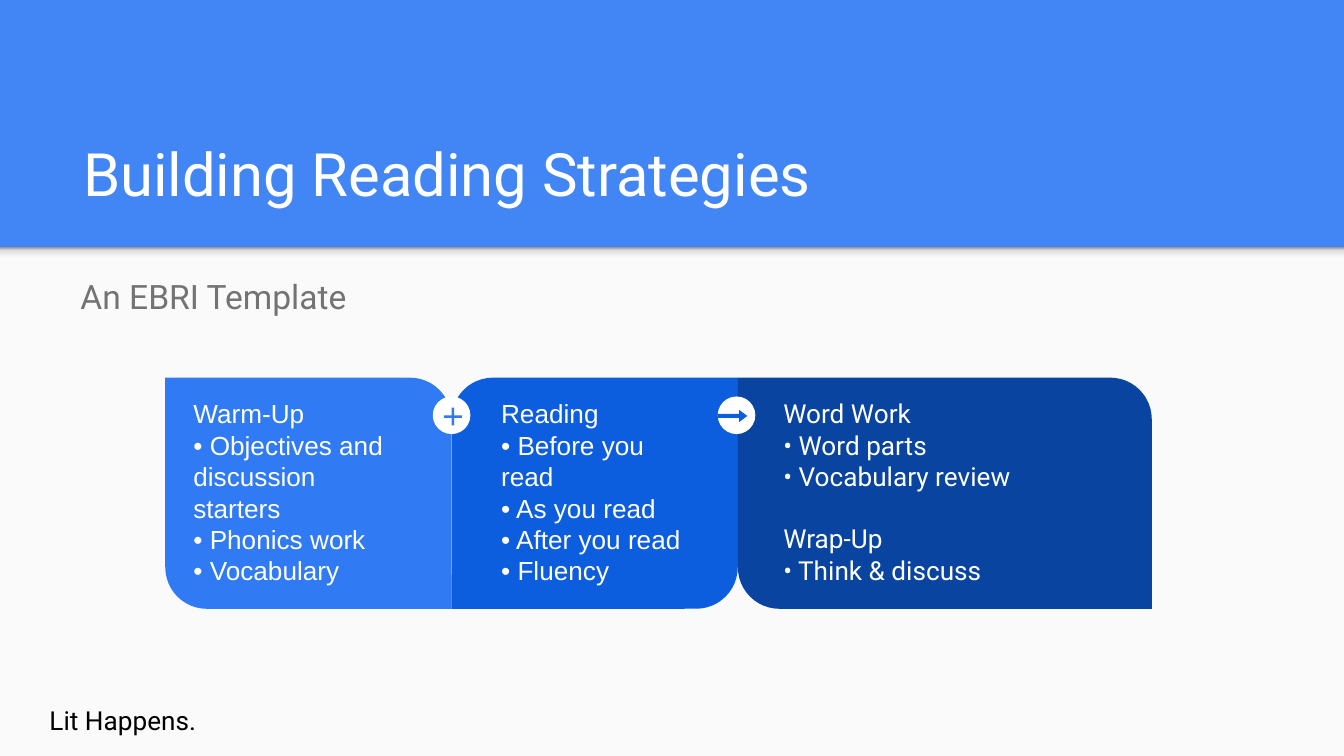
from dataclasses import dataclass

from lxml import etree
from pptx import Presentation
from pptx.dml.color import RGBColor
from pptx.enum import shapes, text
from pptx.oxml import ns
from pptx.util import Inches, Pt

COLORS = {
    "header": "4285F4",
    "page": "FAFAFA",
    "white": "FFFFFF",
    "gray": "737373",
    "black": "000000",
    "light": "307BF3",
    "medium": "0D5DDF",
    "dark": "0944A1",
}
SHADOW_STOPS = [(0, "F9F9F9"), (36, "F9F9F9"), (80, "DEDEDE"), (100, "999999")]
SLIDE_WIDTH = 10
SLIDE_HEIGHT = SLIDE_WIDTH * 9 / 16
HEADER_HEIGHT = 1.84
PANEL_TOP, PANEL_HEIGHT = 2.81, 1.72
CORNER = 0.18
BADGE_SIZE, BADGE_CENTER_Y = 0.28, 3.09
KIND = shapes.MSO_SHAPE


@dataclass
class Box:
    left: float
    top: float
    width: float
    height: float

    def lengths(self):
        return [Inches(n) for n in (self.left, self.top, self.width, self.height)]


@dataclass
class Panel:
    left: float
    width: float
    color: str
    corners: tuple
    text_left: float
    text_width: float
    font: str
    groups: list


@dataclass
class Badge:
    center_x: float
    symbol: int
    symbol_box: Box
    adjustments: list
    color: str


PANELS = [
    Panel(1.23, 2.13, "light", (0, CORNER), 1.34, 1.69, "Arial",
          [["Warm-Up", "• Objectives and", "discussion starters",
            "• Phonics work", "• Vocabulary"]]),
    Panel(3.36, 2.13, "medium", (CORNER, 0), 3.63, 1.59, "Arial",
          [["Reading", "• Before you read", "• As you read",
            "• After you read", "• Fluency"]]),
    Panel(5.49, 3.08, "dark", (0, CORNER), 5.73, 2.61, "Roboto",
          [["Word Work", "• Word parts", "• Vocabulary review"],
           ["Wrap-Up", "• Think & discuss"]]),
]
BADGES = [
    Badge(5.48, KIND.RIGHT_ARROW, Box(5.34, 3.05, 0.22, 0.09), [0.32, 0.67], "medium"),
    Badge(3.36, KIND.MATH_PLUS, Box(3.28, 3.01, 0.18, 0.18), [0.1], "light"),
]


def rgb(name: str) -> RGBColor:
    return RGBColor.from_string(COLORS[name])


def add_filled(slide, kind: int, box: Box, color: str, adjustments=()):
    shape = slide.shapes.add_shape(kind, *box.lengths())
    shape.shadow.inherit = False
    shape.fill.solid()
    shape.fill.fore_color.rgb = rgb(color)
    shape.line.fill.background()
    for index, value in enumerate(adjustments):
        shape.adjustments[index] = value
    return shape


def add_header_shadow(slide) -> None:
    box = Box(0, HEADER_HEIGHT, SLIDE_WIDTH, 0.12)
    shape = add_filled(slide, KIND.RECTANGLE, box, "page")
    shape.fill.gradient()
    shape.fill.gradient_angle = 90
    stops = shape.element.spPr.find(".//" + ns.qn("a:gsLst"))
    for stop in list(stops):
        stops.remove(stop)
    for percent, color in SHADOW_STOPS:
        stop = etree.SubElement(stops, ns.qn("a:gs"), pos=str(percent * 1000))
        etree.SubElement(stop, ns.qn("a:srgbClr"), val=color)


def add_text(slide, box: Box, groups: list, size: int, font: str, color: str,
             anchor=text.MSO_ANCHOR.TOP, line_spacing: float = 1.0) -> None:
    frame = slide.shapes.add_textbox(*box.lengths()).text_frame
    frame.word_wrap = True
    frame.vertical_anchor = anchor
    frame.margin_left = frame.margin_right = Inches(0.1)
    frame.margin_top = frame.margin_bottom = Inches(0.1)
    frame.text = "\n".join(line for group in groups for line in group)
    for paragraph in frame.paragraphs:
        paragraph.line_spacing = line_spacing
        paragraph.font.size = Pt(size)
        paragraph.font.name = font
        paragraph.font.color.rgb = rgb(color)
    start = 0
    for group in groups[:-1]:
        start += len(group)
        frame.paragraphs[start].space_before = Pt(size * 1.18)


def add_panel(slide, panel: Panel) -> None:
    box = Box(panel.left, PANEL_TOP, panel.width, PANEL_HEIGHT)
    add_filled(slide, KIND.ROUND_2_DIAG_RECTANGLE, box, panel.color, panel.corners)


def add_panel_text(slide, panel: Panel) -> None:
    box = Box(panel.text_left, PANEL_TOP + 0.05, panel.text_width, PANEL_HEIGHT - 0.1)
    add_text(slide, box, panel.groups, 14, panel.font, "white")


def add_badge(slide, badge: Badge) -> None:
    circle = Box(badge.center_x - BADGE_SIZE / 2, BADGE_CENTER_Y - BADGE_SIZE / 2,
                 BADGE_SIZE, BADGE_SIZE)
    add_filled(slide, KIND.OVAL, circle, "white")
    add_filled(slide, badge.symbol, badge.symbol_box, badge.color, badge.adjustments)


def main() -> None:
    presentation = Presentation()
    presentation.slide_width = Inches(SLIDE_WIDTH)
    presentation.slide_height = Inches(SLIDE_HEIGHT)
    slide = presentation.slides.add_slide(presentation.slide_layouts[6])
    slide.background.fill.solid()
    slide.background.fill.fore_color.rgb = rgb("header")

    page = Box(0, HEADER_HEIGHT, SLIDE_WIDTH, SLIDE_HEIGHT - HEADER_HEIGHT)
    add_filled(slide, KIND.RECTANGLE, page, "page")
    add_header_shadow(slide)
    add_text(slide, Box(0.52, 0.81, 8.99, 0.84), [["Building Reading Strategies"]],
             32, "Roboto", "white", anchor=text.MSO_ANCHOR.BOTTOM)
    add_text(slide, Box(0.5, 1.91, 8.99, 2.96), [["An EBRI Template"]],
             18, "Roboto", "gray", line_spacing=1.15)
    add_text(slide, Box(0.27, 5.14, 8.66, 0.44), [["Lit Happens."]],
             14, "Roboto", "black")
    for panel in PANELS:
        add_panel(slide, panel)
    for badge in BADGES:
        add_badge(slide, badge)
    for panel in PANELS:
        add_panel_text(slide, panel)

    presentation.save("out.pptx")


if __name__ == "__main__":
    main()
